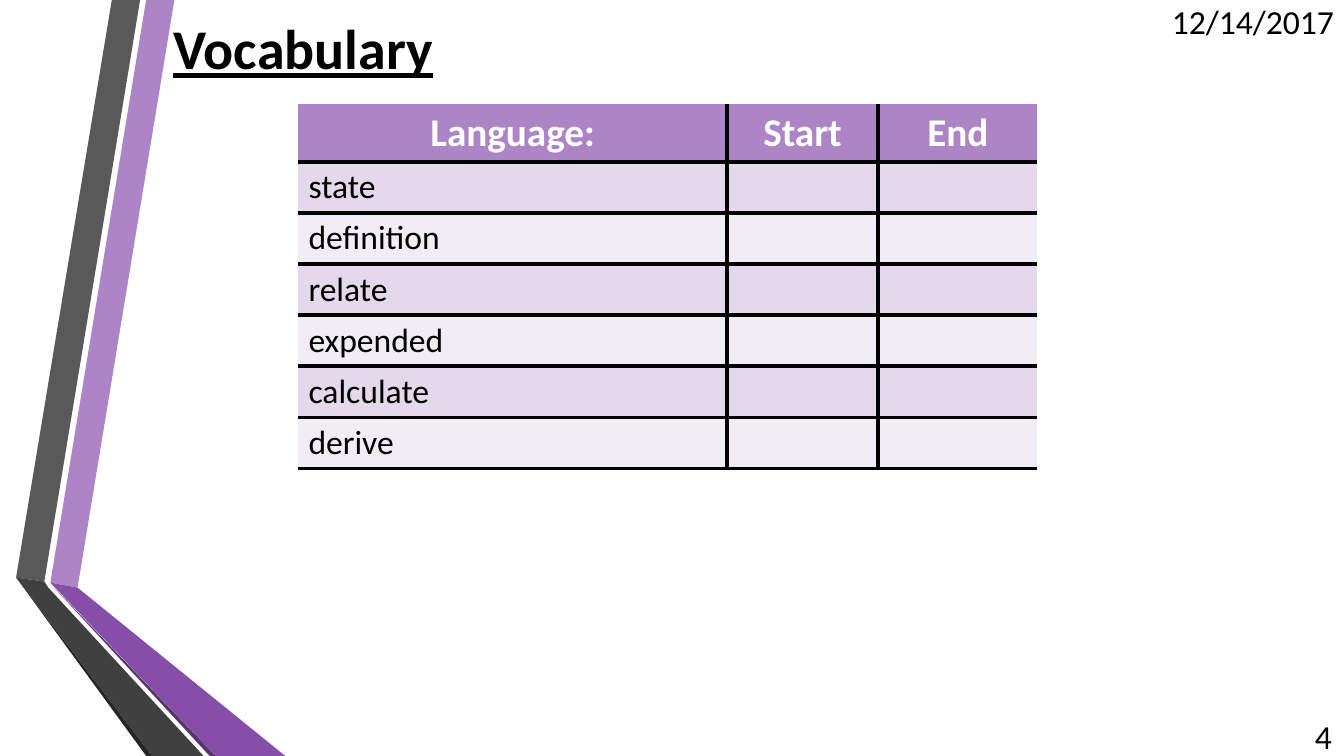
from dataclasses import dataclass, field

from lxml.etree import SubElement
from pptx import Presentation
from pptx.dml.color import RGBColor
from pptx.enum.text import MSO_ANCHOR, MSO_AUTO_SIZE, PP_ALIGN
from pptx.oxml.ns import qn
from pptx.slide import Slide
from pptx.table import _Cell
from pptx.text.text import TextFrame
from pptx.util import Inches, Pt

COLORS = {
    "text": "000000", "border": "000000", "header_text": "FFFFFF",
    "lilac": "AD84C6", "violet": "874EA9", "plum": "5A3471",
    "gray": "595959", "charcoal": "404040", "black": "262626",
    "band_dark": "E3D9EA", "band_light": "F1EDF5",
}
WORDS = ["state", "definition", "relate", "expended", "calculate", "derive"]
HEADERS = ["Language:", "Start", "End"]
COL_WIDTHS = [4.25, 1.5, 1.58]
HEADER_HEIGHT, ROW_HEIGHT = 0.57, 0.5


@dataclass
class Ribbon:
    """A filled polygon of the side decoration."""
    color: str
    points: list[tuple[float, float]]


@dataclass
class Label:
    """A box of text with its place and format."""
    text: str
    box: tuple[float, float, float, float]
    align: PP_ALIGN
    font: dict = field(default_factory=dict)


RIBBONS = [
    Ribbon("lilac", [(0.5, 5.78), (0.77, 5.83), (1.73, 0), (1.45, 0)]),
    Ribbon("gray", [(1.39, 0), (1.11, 0), (0.16, 5.73), (0.44, 5.77)]),
    Ribbon("black", [(0.16, 5.73), (1.45, 7.5), (1.51, 7.5)]),
    Ribbon("plum", [(0.5, 5.79), (2.08, 7.5), (2.14, 7.5)]),
    Ribbon("violet", [(0.5, 5.78), (2.14, 7.5), (2.83, 7.5), (0.77, 5.83)]),
    Ribbon("charcoal", [(2.02, 7.5), (0.48, 5.83), (0.44, 5.77), (0.16, 5.73), (1.51, 7.5)]),
]
TITLE = Label("Vocabulary", (1.62, 0.01, 10.96, 0.92), PP_ALIGN.LEFT,
              {"size": Pt(40), "bold": True, "underline": True})
CORNERS = [
    Label("12/14/2017", (11.29, 0.01, 2.04, 0.4), PP_ALIGN.RIGHT, {"size": Pt(24)}),
    Label("4", (12.58, 7.1, 0.73, 0.4), PP_ALIGN.RIGHT, {"size": Pt(24)}),
]


def rgb(name: str) -> RGBColor:
    """Return a named colour."""
    return RGBColor.from_string(COLORS[name])


def write(tf: TextFrame, text: str, align: PP_ALIGN, font: dict, color: str = "text") -> None:
    """Put one formatted paragraph in a text frame."""
    p = tf.paragraphs[0]
    p.alignment = align
    r = p.add_run()
    r.text = text
    for name, value in ({"name": "Calibri"} | font).items():
        setattr(r.font, name, value)
    r.font.color.rgb = rgb(color)


def draw_ribbon(s: Slide, ribbon: Ribbon) -> None:
    """Draw one polygon."""
    start, *rest = [(Inches(x), Inches(y)) for x, y in ribbon.points]
    fb = s.shapes.build_freeform(*start)
    fb.add_line_segments(rest, close=True)
    sp = fb.convert_to_shape()
    sp.shadow.inherit = False
    sp.fill.solid()
    sp.fill.fore_color.rgb = rgb(ribbon.color)
    sp.line.fill.background()


def draw_title(s: Slide, label: Label) -> None:
    """Place and fill the title placeholder."""
    sp = s.shapes.title
    for name, value in zip(("left", "top", "width", "height"), label.box):
        setattr(sp, name, Inches(value))
    fill_label(sp.text_frame, label)


def draw_corner(s: Slide, label: Label) -> None:
    """Add a text box for a label."""
    fill_label(s.shapes.add_textbox(*map(Inches, label.box)).text_frame, label)


def fill_label(tf: TextFrame, label: Label) -> None:
    """Set up the frame of a label and write its text."""
    frame = {"word_wrap": True, "auto_size": MSO_AUTO_SIZE.NONE,
             "vertical_anchor": MSO_ANCHOR.MIDDLE}
    for name, value in frame.items():
        setattr(tf, name, value)
    write(tf, label.text, label.align, label.font)


def style_cell(cell: _Cell, sides: str, color: str) -> None:
    """Give a cell its borders on the listed sides and its fill."""
    tc_pr = cell._tc.get_or_add_tcPr()
    for side in "LRTB":
        ln = SubElement(tc_pr, qn(f"a:ln{side}"), w=str(Pt(3)))
        if side in sides:
            fill = SubElement(ln, qn("a:solidFill"))
            SubElement(fill, qn("a:srgbClr"), val=COLORS["border"])
        else:
            SubElement(ln, qn("a:noFill"))
    cell.fill.solid()
    cell.fill.fore_color.rgb = rgb(color)


def draw_table(s: Slide) -> None:
    """Draw the vocabulary table."""
    rows = [HEADERS] + [[word, "", ""] for word in WORDS]
    height = HEADER_HEIGHT + ROW_HEIGHT * len(WORDS)
    box = (2.96, 1.03, sum(COL_WIDTHS), height)
    tbl = s.shapes.add_table(len(rows), len(HEADERS), *map(Inches, box)).table
    for col, width in zip(tbl.columns, COL_WIDTHS):
        col.width = Inches(width)
    for i, texts in enumerate(rows):
        tbl.rows[i].height = Inches(ROW_HEIGHT if i else HEADER_HEIGHT)
        band = ("band_dark" if i % 2 else "band_light") if i else "lilac"
        for j, text in enumerate(texts):
            cell = tbl.cell(i, j)
            sides = "B" + "T" * (i > 0) + "L" * (j > 0) + "R" * (j < len(texts) - 1)
            style_cell(cell, sides, band)
            if i == 0:
                cell.vertical_anchor = MSO_ANCHOR.MIDDLE
                write(cell.text_frame, text, PP_ALIGN.CENTER,
                      {"size": Pt(28), "bold": True}, "header_text")
            elif text:
                write(cell.text_frame, text, PP_ALIGN.LEFT, {"size": Pt(24), "bold": False})


def main() -> None:
    """Build the slide and save it."""
    prs = Presentation()
    prs.slide_width, prs.slide_height = Inches(13.33), Inches(7.5)
    s = prs.slides.add_slide(prs.slide_layouts[5])
    for ribbon in RIBBONS:
        draw_ribbon(s, ribbon)
    draw_title(s, TITLE)
    for label in CORNERS:
        draw_corner(s, label)
    draw_table(s)
    prs.save("out.pptx")


if __name__ == "__main__":
    main()
